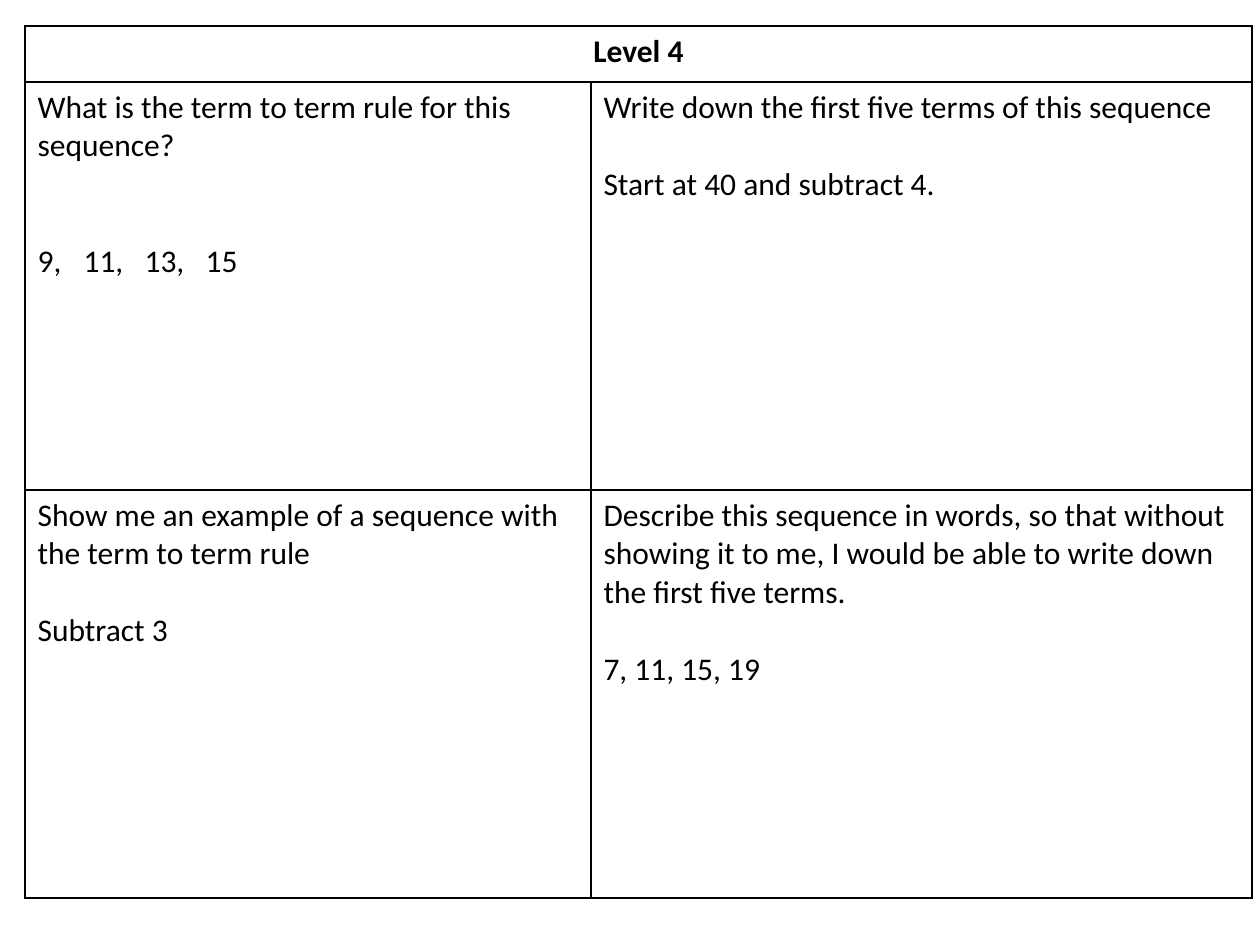
from lxml.etree import SubElement
from pptx import Presentation
from pptx.dml.color import RGBColor
from pptx.enum.text import PP_ALIGN
from pptx.oxml.ns import qn
from pptx.util import Emu, Pt

COLORS = {"text": "000000", "border": "000000", "cell": "FFFFFF"}
EMU_PER_PX = 914400 / 126
LINE_HEIGHT = 22
SEQUENCE_TABS = (46, 107, 168)

# Each question: its prompt, the number of lines left free, and its task.
QUESTIONS = [
    [
        ("What is the term to term rule for this sequence?", 2, "9,\t11,\t13,\t15"),
        ("Write down the first five terms of this sequence", 1,
         "Start at 40 and subtract 4."),
    ],
    [
        ("Show me an example of a sequence with the term to term rule", 1, "Subtract 3"),
        ("Describe this sequence in words, so that without showing it to me, "
         "I would be able to write down the first five terms.", 1, "7, 11, 15, 19"),
    ],
]


def px(length):
    return Emu(round(length * EMU_PER_PX))


class SlideBuilder:
    def __init__(self, slide, font="Calibri", size=18, border_width=1):
        self.slide = slide
        self.font = font
        self.size = size
        self.border_width = border_width

    def table(self, left, top, columns, rows):
        frame = self.slide.shapes.add_table(
            len(rows), len(columns), px(left), px(top), px(sum(columns)), px(sum(rows)))
        table = frame.table
        table.first_row = False
        table.horz_banding = False
        for column, width in zip(table.columns, columns):
            column.width = px(width)
        for row, height in zip(table.rows, rows):
            row.height = px(height)
        for cell in table.iter_cells():
            self.cell_style(cell)
        return table

    def cell_style(self, cell):
        properties = cell._tc.get_or_add_tcPr()
        for side in ("a:lnL", "a:lnR", "a:lnT", "a:lnB"):
            line = SubElement(properties, qn(side), w=str(Pt(self.border_width)))
            fill = SubElement(line, qn("a:solidFill"))
            SubElement(fill, qn("a:srgbClr"), val=COLORS["border"])
        cell.fill.solid()
        cell.fill.fore_color.rgb = RGBColor.from_string(COLORS["cell"])

    def text(self, paragraph, wording, bold=False):
        run = paragraph.add_run()
        run.text = wording
        run.font.name = self.font
        run.font.size = Pt(self.size)
        run.font.bold = bold
        run.font.color.rgb = RGBColor.from_string(COLORS["text"])

    def tab_stops(self, paragraph, positions):
        tabs = SubElement(paragraph._p.get_or_add_pPr(), qn("a:tabLst"))
        for position in positions:
            SubElement(tabs, qn("a:tab"), pos=str(px(position)), algn="l")

    def title(self, cell, wording):
        paragraph = cell.text_frame.paragraphs[0]
        paragraph.alignment = PP_ALIGN.CENTER
        self.text(paragraph, wording, bold=True)

    def question(self, cell, prompt, free_lines, task):
        self.text(cell.text_frame.paragraphs[0], prompt)
        paragraph = cell.text_frame.add_paragraph()
        paragraph.space_before = Pt(free_lines * LINE_HEIGHT)
        if "\t" in task:
            self.tab_stops(paragraph, SEQUENCE_TABS)
        self.text(paragraph, task)


def main():
    presentation = Presentation()
    presentation.slide_width = px(1260)
    presentation.slide_height = px(945)
    slide = presentation.slides.add_slide(presentation.slide_layouts[6])
    builder = SlideBuilder(slide)

    table = builder.table(25, 26, columns=(566, 661), rows=(56, 408, 408))
    table.cell(0, 0).merge(table.cell(0, 1))
    builder.title(table.cell(0, 0), "Level 4")
    for row, questions in enumerate(QUESTIONS, start=1):
        for column, question in enumerate(questions):
            builder.question(table.cell(row, column), *question)

    presentation.save("out.pptx")


if __name__ == "__main__":
    main()
